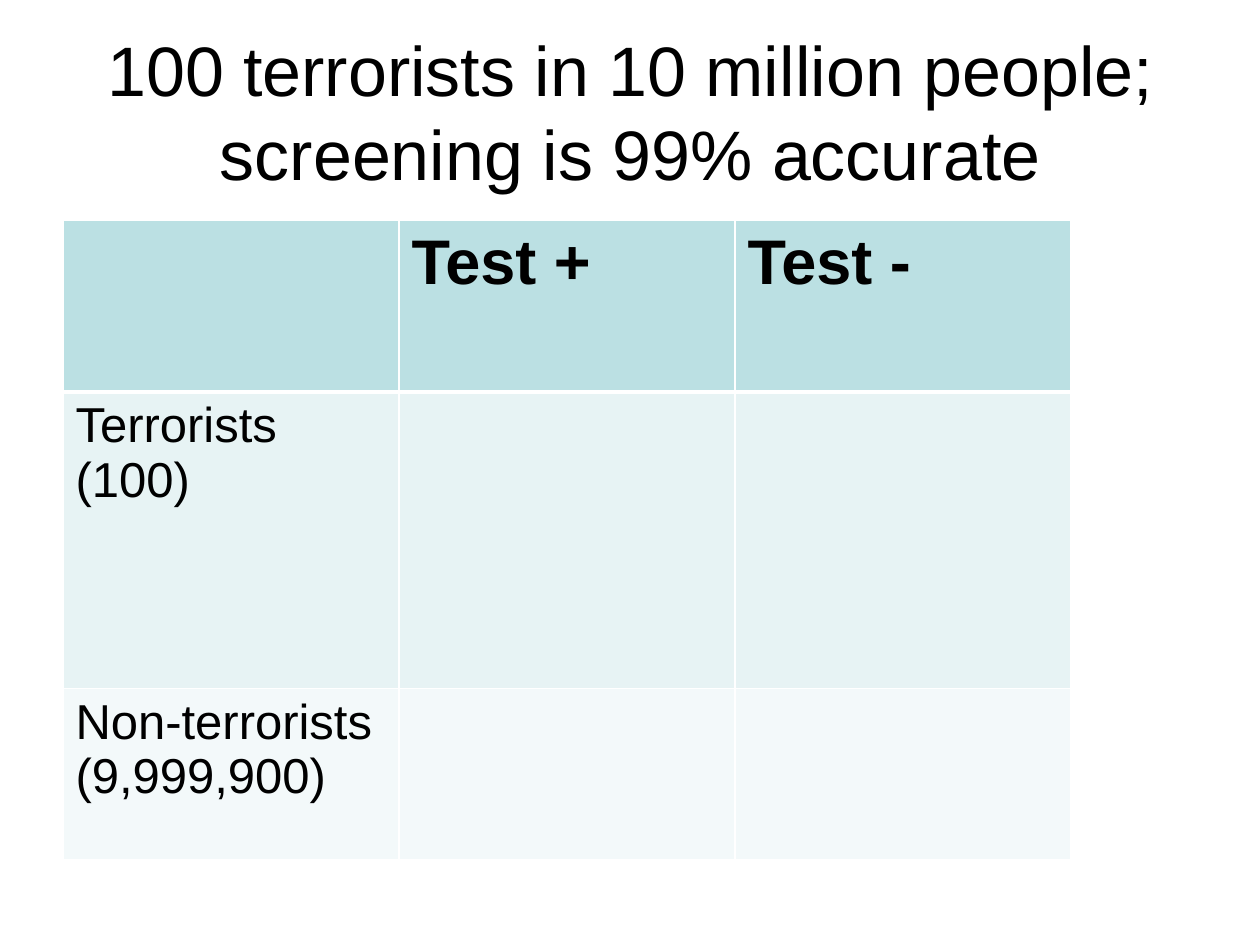
import pptx
import pptx.dml.color
import pptx.enum.text
import pptx.oxml
import pptx.oxml.ns
import pptx.util
from pptx.util import Cm

FONT = "Arial"
ROW_FILLS = ["BBE0E3", "E7F3F4", "F3F9FA"]
ROW_HEIGHTS = [3.45, 5.98, 3.45]
CELL_TEXTS = [
    ["", "Test +", "Test -"],
    ["Terrorists\n(100)", "", ""],
    ["Non-terrorists (9,999,900)", "", ""],
]


def color(hex_string):
    return pptx.dml.color.RGBColor.from_string(hex_string)


def format_text(text_frame, size, bold=False):
    for para in text_frame.paragraphs:
        para.font.size = pptx.util.Pt(size)
        for span in para.runs:
            span.font.name = FONT
            span.font.size = pptx.util.Pt(size)
            span.font.bold = bold
            span.font.color.rgb = color("000000")


def set_border(cell, side, points):
    line = pptx.oxml.parse_xml(
        f'<a:ln{side} {pptx.oxml.ns.nsdecls("a")} w="{pptx.util.Pt(points)}">'
        f'<a:solidFill><a:srgbClr val="FFFFFF"/></a:solidFill></a:ln{side}>'
    )
    cell._tc.get_or_add_tcPr().append(line)


def add_title(page, left, top, width, height):
    title = page.shapes.title
    title.left, title.top, title.width, title.height = left, top, width, height
    frame = title.text_frame
    frame.text = "100 terrorists in 10 million people; screening is 99% accurate"
    frame.word_wrap = True
    frame.vertical_anchor = pptx.enum.text.MSO_ANCHOR.MIDDLE
    frame.paragraphs[0].alignment = pptx.enum.text.PP_ALIGN.CENTER
    format_text(frame, 40)


def add_screening_table(page, left, top, width, height):
    table = page.shapes.add_table(3, 3, left, top, width, height).table
    for column in table.columns:
        column.width = width // 3
    for row_index, row in enumerate(table.rows):
        row.height = Cm(ROW_HEIGHTS[row_index])
        is_header = row_index == 0
        for cell, text in zip(row.cells, CELL_TEXTS[row_index]):
            # Thick rule under the header, thin rules elsewhere
            for side in "LRTB":
                thick = (row_index, side) in [(0, "B"), (1, "T")]
                set_border(cell, side, 3 if thick else 1)
            cell.fill.solid()
            cell.fill.fore_color.rgb = color(ROW_FILLS[row_index])
            cell.text_frame.text = text
            format_text(cell.text_frame, 36 if is_header else 28, is_header)


def main():
    deck = pptx.Presentation()
    deck.slide_width, deck.slide_height = Cm(25.4), Cm(19.05)
    page = deck.slides.add_slide(deck.slide_layouts.get_by_name("Title Only"))
    add_title(page, Cm(1.27), Cm(0.64), Cm(22.86), Cm(3.17))
    add_screening_table(page, Cm(1.27), Cm(4.45), Cm(20.32), Cm(sum(ROW_HEIGHTS)))
    deck.save("out.pptx")


if __name__ == "__main__":
    main()
